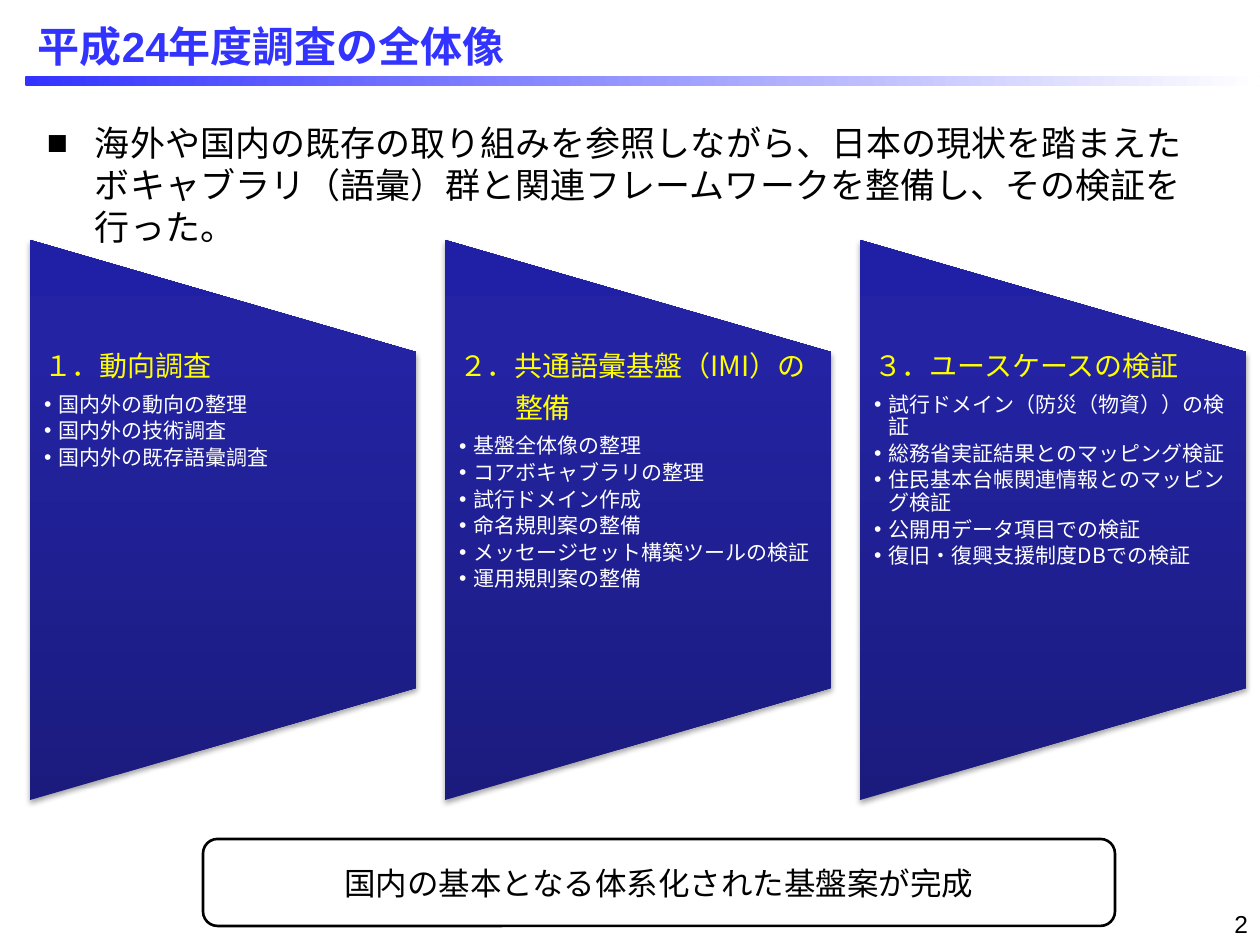
from dataclasses import dataclass
from typing import Any

import lxml.etree
import pptx
import pptx.dml.color
import pptx.enum.shapes
import pptx.enum.text
import pptx.oxml
import pptx.oxml.ns
import pptx.util

EMU_PER_PX = 914400 / 126
SHAPES = pptx.enum.shapes.MSO_SHAPE
ALIGN = pptx.enum.text.PP_ALIGN
ANCHOR = pptx.enum.text.MSO_ANCHOR


@dataclass(frozen=True)
class Theme:
    accent: str = "3333FF"
    paper: str = "FFFFFF"
    ink: str = "000000"
    heading: str = "FFFF00"
    panel_stops: tuple = ((0, "1B1B7E"), (80, "2323A3"), (100, "2020A6"))
    latin: str = "Arial"
    japanese: str = "Noto Sans CJK JP"
    title_size: int = 24
    body_size: int = 20
    result_size: int = 18
    heading_size: int = 16
    number_size: int = 14
    item_size: int = 12


@dataclass(frozen=True)
class Box:
    left: int
    top: int
    width: int
    height: int


@dataclass(frozen=True)
class Panel:
    heading: str
    items: tuple[str, ...]
    heading_rest: str = ""
    right_inset: int = 14


THEME = Theme()
PANELS = (
    Panel("１．動向調査", ("国内外の動向の整理", "国内外の技術調査", "国内外の既存語彙調査")),
    Panel("２．共通語彙基盤（IMI）の",
          ("基盤全体像の整理", "コアボキャブラリの整理", "試行ドメイン作成", "命名規則案の整備",
           "メッセージセット構築ツールの検証", "運用規則案の整備"),
          heading_rest="整備", right_inset=10),
    Panel("３．ユースケースの検証",
          ("試行ドメイン（防災（物資））の検証", "総務省実証結果とのマッピング検証",
           "住民基本台帳関連情報とのマッピング検証", "公開用データ項目での検証",
           "復旧・復興支援制度DBでの検証")),
)
FIRST_PANEL = Box(30, 240, 386, 560)
PANEL_PITCH = 415


def px(length: float) -> int:
    return round(length * EMU_PER_PX)


def rgb(code: str) -> pptx.dml.color.RGBColor:
    return pptx.dml.color.RGBColor.from_string(code)


def apply(target: Any, values: dict[str, Any]) -> None:
    for name, value in values.items():
        setattr(target, name, value)


def place(shape: Any, box: Box) -> None:
    apply(shape, {name: px(getattr(box, name)) for name in ("left", "top", "width", "height")})


def add_child(parent: Any, tag: str, **attributes: Any) -> Any:
    child = lxml.etree.SubElement(parent, pptx.oxml.ns.qn(tag))
    for name, value in attributes.items():
        child.set(name, str(value))
    return child


def set_frame(frame: Any, anchor: Any = ANCHOR.TOP,
              insets: tuple[int, int, int, int] = (13, 6, 13, 6)) -> None:
    names = ("margin_left", "margin_top", "margin_right", "margin_bottom")
    apply(frame, {"word_wrap": True, "auto_size": pptx.enum.text.MSO_AUTO_SIZE.NONE,
                  "vertical_anchor": anchor, **dict(zip(names, map(px, insets)))})


def write(para: Any, text: str, size: int, color: str, font: str = THEME.japanese,
          bold: bool = False, **layout: Any) -> None:
    apply(para, layout)
    span = para.add_run()
    apply(span, {"text": text})
    apply(span.font, {"size": pptx.util.Pt(size), "name": font, "bold": bold})
    span.font.color.rgb = rgb(color)
    add_child(span.font._element, "a:ea", typeface=THEME.japanese)


def indent(para: Any, left: int, first: int = 0, bullet: str = "") -> None:
    settings = para._p.get_or_add_pPr()
    settings.set("marL", str(px(left)))
    settings.set("indent", str(px(first)))
    if bullet:
        add_child(settings, "a:buFont", typeface=THEME.latin)
        add_child(settings, "a:buChar", char=bullet)


def add_shape(page: Any, kind: Any, box: Box) -> Any:
    shape = page.shapes.add_shape(kind, 0, 0, 0, 0)
    place(shape, box)
    shape.shadow.inherit = False
    return shape


def fill_gradient(shape: Any, stops: tuple, angle: int) -> None:
    shape.line.fill.background()
    shape.fill.gradient()
    gradient = shape._element.spPr.find(pptx.oxml.ns.qn("a:gradFill"))
    for child in list(gradient):
        gradient.remove(child)
    gradient.set("rotWithShape", "0")
    stop_list = add_child(gradient, "a:gsLst")
    for position, color in stops:
        add_child(add_child(stop_list, "a:gs", pos=position * 1000), "a:srgbClr", val=color)
    add_child(gradient, "a:lin", ang=angle * 60000, scaled=0)


def drop_shadow(shape: Any) -> None:
    effects = shape._element.spPr.find(pptx.oxml.ns.qn("a:effectLst"))
    shadow = add_child(effects, "a:outerShdw", blurRad=pptx.util.Pt(3.1), dist=pptx.util.Pt(1.8),
                       dir=90 * 60000, rotWithShape=0)
    add_child(add_child(shadow, "a:srgbClr", val=THEME.ink), "a:alpha", val=35000)


def add_text_box(page: Any, box: Box) -> Any:
    text_box = page.shapes.add_textbox(0, 0, 0, 0)
    place(text_box, box)
    return text_box.text_frame


def draw_panel(page: Any, panel: Panel, box: Box) -> None:
    # The trapezoid stands on its side, so its width and height are swapped
    shift = (box.height - box.width) // 2
    trapezoid = add_shape(page, SHAPES.FLOWCHART_MANUAL_OPERATION,
                          Box(box.left - shift, box.top + shift, box.height, box.width))
    trapezoid.rotation = 270
    fill_gradient(trapezoid, THEME.panel_stops, 270)
    drop_shadow(trapezoid)

    # The text fills the three middle fifths
    fifth = box.height // 5
    frame = add_text_box(page, Box(box.left, box.top + fifth, box.width, 3 * fifth))
    set_frame(frame, insets=(14, 0, panel.right_inset, 0))
    heading = {"size": THEME.heading_size, "color": THEME.heading,
               "line_spacing": 0.9, "space_after": pptx.util.Pt(6.7)}
    write(frame.paragraphs[0], panel.heading, **heading)
    if panel.heading_rest:
        para = frame.add_paragraph()
        write(para, panel.heading_rest, **heading)
        indent(para, 56)
    for item in panel.items:
        para = frame.add_paragraph()
        write(para, item, THEME.item_size, THEME.paper, level=1,
              line_spacing=0.9, space_after=pptx.util.Pt(2.2))
        indent(para, 15, -15, "•")


def main() -> None:
    deck = pptx.Presentation()
    apply(deck, {"slide_width": px(1260), "slide_height": px(945)})
    page = deck.slides.add_slide(deck.slide_layouts[1])
    title, body = page.placeholders

    # Title and the fading rule below it
    place(title, Box(25, 16, 1008, 60))
    set_frame(title.text_frame, ANCHOR.MIDDLE)
    write(title.text_frame.paragraphs[0], "平成24年度調査の全体像", THEME.title_size, THEME.accent,
          THEME.latin, bold=True, alignment=ALIGN.LEFT)
    rule = add_shape(page, SHAPES.ROUNDED_RECTANGLE, Box(25, 76, 1235, 10))
    fill_gradient(rule, ((0, THEME.accent), (100, THEME.paper)), 0)

    # Summary
    place(body, Box(34, 115, 1191, 69))
    set_frame(body.text_frame)
    summary = body.text_frame.paragraphs[0]
    write(summary, "海外や国内の既存の取り組みを参照しながら、日本の現状を踏まえた"
          "ボキャブラリ（語彙）群と関連フレームワークを整備し、その検証を行った。",
          THEME.body_size, THEME.ink, space_before=pptx.util.Pt(4))
    indent(summary, 48, -48, "■")

    # Three work areas
    for index, panel in enumerate(PANELS):
        draw_panel(page, panel, Box(FIRST_PANEL.left + index * PANEL_PITCH, FIRST_PANEL.top,
                                    FIRST_PANEL.width, FIRST_PANEL.height))

    # Result
    result = add_shape(page, SHAPES.ROUNDED_RECTANGLE, Box(203, 839, 912, 87))
    result.fill.solid()
    result.fill.fore_color.rgb = rgb(THEME.paper)
    result.line.color.rgb = rgb(THEME.ink)
    result.line.width = pptx.util.Pt(1.5)
    set_frame(result.text_frame, ANCHOR.MIDDLE)
    write(result.text_frame.paragraphs[0], "国内の基本となる体系化された基盤案が完成",
          THEME.result_size, THEME.ink, alignment=ALIGN.CENTER)

    # Page number
    number = add_text_box(page, Box(968, 903, 293, 42))
    set_frame(number)
    write(number.paragraphs[0], "2", THEME.number_size, THEME.ink, THEME.latin,
          alignment=ALIGN.RIGHT)
    deck.save("out.pptx")


if __name__ == "__main__":
    main()
